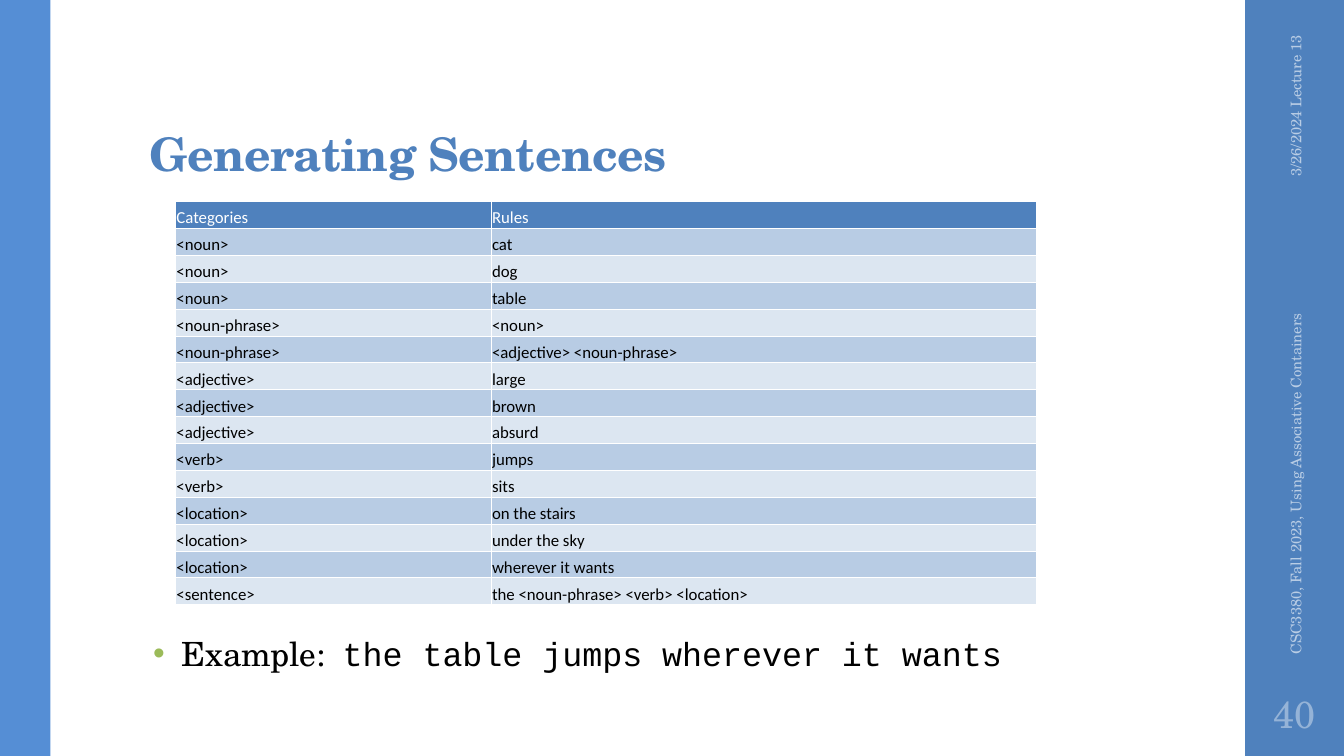
from lxml import etree
from pptx import Presentation
from pptx.dml.color import RGBColor
from pptx.enum.shapes import MSO_SHAPE
from pptx.enum.text import MSO_ANCHOR, PP_ALIGN
from pptx.oxml.ns import qn
from pptx.util import Inches, Pt

RECTANGLE = MSO_SHAPE.RECTANGLE
MIDDLE, BOTTOM = MSO_ANCHOR.MIDDLE, MSO_ANCHOR.BOTTOM
LEFT, CENTER, RIGHT = PP_ALIGN.LEFT, PP_ALIGN.CENTER, PP_ALIGN.RIGHT

SERIF, SANS, MONO = "TeX Gyre Schola", "Calibri", "Courier New"
BLUE, SIDE_BLUE, PALE_BLUE, NUMBER_BLUE = "4F81BD", "558ED5", "B9CDE5", "95B3D7"
BANDS = ("DCE6F1", "B8CCE4")
WHITE, BLACK, GREEN = "FFFFFF", "000000", "9BBB59"

GRAMMAR = [
    ("Categories", "Rules"),
    ("<noun>", "cat"),
    ("<noun>", "dog"),
    ("<noun>", "table"),
    ("<noun-phrase>", "<noun>"),
    ("<noun-phrase>", "<adjective> <noun-phrase>"),
    ("<adjective>", "large"),
    ("<adjective>", "brown"),
    ("<adjective>", "absurd"),
    ("<verb>", "jumps"),
    ("<verb>", "sits"),
    ("<location>", "on the stairs"),
    ("<location>", "under the sky"),
    ("<location>", "wherever it wants"),
    ("<sentence>", "the <noun-phrase> <verb> <location>"),
]


def color(hex_string):
    return RGBColor.from_string(hex_string)


def set_font(font, name, size, hex_string):
    font.name = name
    font.size = Pt(size)
    font.color.rgb = color(hex_string)


def set_margins(target, left, top, right, bottom):
    target.margin_left, target.margin_top = Inches(left), Inches(top)
    target.margin_right, target.margin_bottom = Inches(right), Inches(bottom)


def add_bar(slide, left, width, height, fill):
    bar = slide.shapes.add_shape(RECTANGLE, Inches(left), 0, Inches(width), Inches(height))
    bar.shadow.inherit = False
    bar.fill.solid()
    bar.fill.fore_color.rgb = color(fill)
    bar.line.fill.background()


def add_label(slide, box, text, size, hex_string, alignment, rotation=0):
    label = slide.shapes.add_textbox(*map(Inches, box))
    label.rotation = rotation
    frame = label.text_frame
    frame.word_wrap = True
    frame.vertical_anchor = MIDDLE
    set_margins(frame, 0.05, 0.05, 0.05, 0.05)
    if rotation:
        set_margins(frame, 0.1, 0.05, 0.1, 0.05)
    paragraph = frame.paragraphs[0]
    paragraph.text = text
    paragraph.alignment = alignment
    set_font(paragraph.font, SERIF, size, hex_string)


def add_side_panel(slide, left, width, height):
    """Right-hand bar with the date, the course and the slide number."""
    add_bar(slide, left, width, height, BLUE)
    center = left + 0.5
    for text, length, middle, alignment in (
        ("3/26/2024 Lecture 13", 2.08, 1.29, RIGHT),
        ("CSC3380, Fall 2023, Using Associative Containers", 3.92, 4.63, LEFT),
    ):
        box = (center - length / 2, middle - 0.2, length, 0.4)
        add_label(slide, box, text, 10.5, PALE_BLUE, alignment, rotation=270)
    add_label(slide, (left, height - 0.75, width, 0.65), "40", 27, NUMBER_BLUE, CENTER)


def place_title(slide, box, text):
    title = slide.shapes.title
    title.left, title.top, title.width, title.height = map(Inches, box)
    frame = title.text_frame
    frame.word_wrap = True
    frame.vertical_anchor = BOTTOM
    set_margins(frame, 0.1, 0.03, 0.1, 0.05)
    paragraph = frame.paragraphs[0]
    run = paragraph.add_run()
    run.text = text
    paragraph.alignment = LEFT
    paragraph.line_spacing = 0.9
    set_font(run.font, SERIF, 33, BLUE)
    run.font.bold = True
    run.font._element.set("spc", "-40")


def add_cell_borders(cell, hex_string, width):
    properties = cell._tc.get_or_add_tcPr()
    for position, side in enumerate(("a:lnL", "a:lnR", "a:lnT", "a:lnB")):
        line = etree.Element(qn(side), w=str(Pt(width)))
        fill = etree.SubElement(line, qn("a:solidFill"))
        etree.SubElement(fill, qn("a:srgbClr"), val=hex_string)
        properties.insert(position, line)


def add_grammar_table(slide, box, column_widths):
    frame = slide.shapes.add_table(len(GRAMMAR), len(column_widths), *map(Inches, box))
    table = frame.table
    for column, width in zip(table.columns, column_widths):
        column.width = Inches(width)
    for row_index, entries in enumerate(GRAMMAR):
        is_header = row_index == 0
        table.rows[row_index].height = Inches(box[3] / len(GRAMMAR))
        for column_index, text in enumerate(entries):
            cell = table.cell(row_index, column_index)
            cell.fill.solid()
            cell.fill.fore_color.rgb = color(BLUE if is_header else BANDS[row_index % 2])
            cell.vertical_anchor = BOTTOM
            set_margins(cell, 0.01, 0.01, 0.01, 0)
            add_cell_borders(cell, WHITE, 0.5)
            paragraph = cell.text_frame.paragraphs[0]
            paragraph.text = text
            set_font(paragraph.font, SANS, 12, WHITE if is_header else BLACK)
            paragraph.font.bold = False


def add_example(slide, box):
    frame = slide.shapes.add_textbox(*map(Inches, box)).text_frame
    frame.word_wrap = True
    paragraph = frame.paragraphs[0]
    properties = paragraph._p.get_or_add_pPr()
    properties.set("marL", str(Inches(0.4)))
    properties.set("indent", str(Inches(-0.28)))
    bullet_color = etree.SubElement(properties, qn("a:buClr"))
    etree.SubElement(bullet_color, qn("a:srgbClr"), val=GREEN)
    etree.SubElement(properties, qn("a:buFont"), typeface="Arial")
    etree.SubElement(properties, qn("a:buChar"), char="•")
    for text, font_name in (
        ("Example: \t", SERIF),
        ("the table jumps wherever it wants", MONO),
    ):
        run = paragraph.add_run()
        run.text = text
        set_font(run.font, font_name, 23.8, BLACK)


def build_slide(presentation):
    slide = presentation.slides.add_slide(presentation.slide_layouts[5])
    add_side_panel(slide, 12.35, 0.98, 7.5)
    add_bar(slide, 0, 0.5, 7.5, SIDE_BLUE)
    place_title(slide, (1.38, 0.32, 10.6, 1.53), "Generating Sentences")
    add_grammar_table(slide, (1.74, 2, 8.54, 4), (3.13, 5.41))
    add_example(slide, (1.3, 6.23, 9.62, 0.71))


def main():
    presentation = Presentation()
    presentation.slide_width = Inches(13.33)
    presentation.slide_height = Inches(7.5)
    build_slide(presentation)
    presentation.save("out.pptx")


if __name__ == "__main__":
    main()
